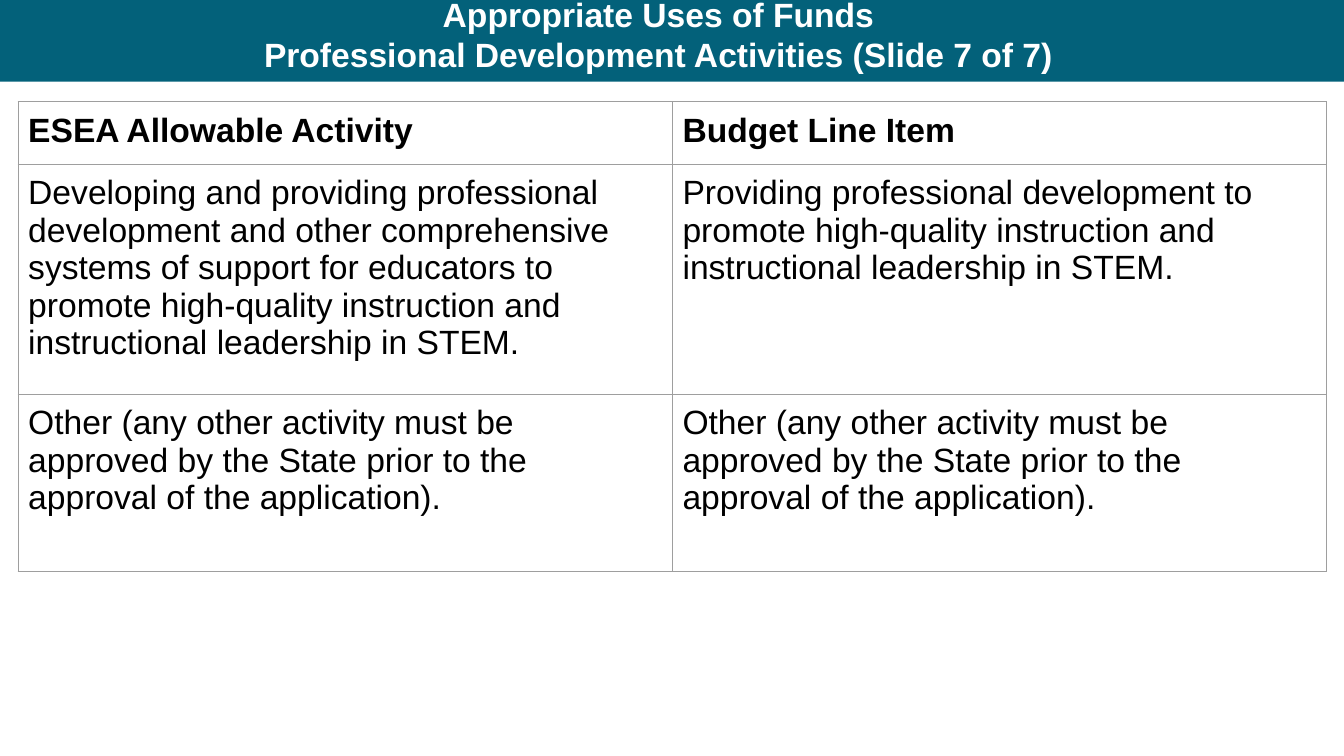
from lxml.etree import SubElement
from pptx import Presentation
from pptx.dml.color import RGBColor
from pptx.enum.shapes import MSO_SHAPE
from pptx.enum.text import MSO_ANCHOR, PP_ALIGN
from pptx.oxml.ns import qn
from pptx.util import Inches, Pt

COLORS = {"banner": "03617A", "title": "FFFFFF", "text": "000000",
          "paper": "FFFFFF", "border": "9E9E9E"}
FONT = "Arial"
FONT_SIZE = Pt(24)
BORDER_WIDTH = Pt(0.75)

TITLE = ["Appropriate Uses of Funds",
         "Professional Development Activities (Slide 7 of 7)"]
OTHER = ("Other (any other activity must be approved by the State prior to "
         "the approval of the application).")
ACTIVITIES = [
    ["ESEA Allowable Activity", "Budget Line Item"],
    ["Developing and providing professional development and other "
     "comprehensive systems of support for educators to promote high-quality "
     "instruction and instructional leadership in STEM.",
     "Providing professional development to promote high-quality instruction "
     "and instructional leadership in STEM."],
    [OTHER, OTHER],
]
ROW_HEIGHTS = [0.62, 2.28, 1.76]


def color(name):
    return RGBColor.from_string(COLORS[name])


def style_paragraph(paragraph, color_name, bold):
    font = paragraph.font
    font.name, font.size, font.bold = FONT, FONT_SIZE, bold
    font.color.rgb = color(color_name)


def add_banner(slide, left, top, width, height):
    banner = slide.shapes.add_shape(MSO_SHAPE.RECTANGLE, left, top, width, height)
    banner.shadow.inherit = False
    banner.fill.solid()
    banner.fill.fore_color.rgb = color("banner")
    banner.line.fill.background()


def add_title(slide, left, top, width, height):
    """Stack the title lines upward from the bottom of the box."""
    frame = slide.shapes.add_textbox(left, top, width, height).text_frame
    frame.word_wrap = True
    frame.vertical_anchor = MSO_ANCHOR.BOTTOM
    frame.margin_top = frame.margin_bottom = Inches(0.06)
    frame.text = "\n".join(TITLE)
    for paragraph in frame.paragraphs:
        paragraph.alignment = PP_ALIGN.CENTER
        paragraph.line_spacing = Pt(28.5)
        style_paragraph(paragraph, "title", bold=True)


def add_borders(cell):
    properties = cell._tc.get_or_add_tcPr()
    for position, side in enumerate(("a:lnL", "a:lnR", "a:lnT", "a:lnB")):
        line = properties.makeelement(qn(side), {"w": str(BORDER_WIDTH)})
        properties.insert(position, line)
        fill = SubElement(line, qn("a:solidFill"))
        SubElement(fill, qn("a:srgbClr"), val=COLORS["border"])


def fill_cell(cell, text, bold):
    cell.fill.solid()
    cell.fill.fore_color.rgb = color("paper")
    cell.margin_left = cell.margin_right = Inches(0.1)
    cell.margin_top = cell.margin_bottom = Inches(0.1)
    cell.text = text
    style_paragraph(cell.text_frame.paragraphs[0], "text", bold)
    add_borders(cell)


def add_activity_table(slide, left, top, width, height):
    table = slide.shapes.add_table(len(ACTIVITIES), len(ACTIVITIES[0]),
                                   left, top, width, height).table
    table.horz_banding = False
    for row, row_height, texts in zip(table.rows, ROW_HEIGHTS, ACTIVITIES):
        row.height = Inches(row_height)
        for cell, text in zip(row.cells, texts):
            fill_cell(cell, text, bold=texts is ACTIVITIES[0])


def main():
    presentation = Presentation()
    presentation.slide_width, presentation.slide_height = Inches(13.33), Inches(7.5)
    slide = presentation.slides.add_slide(presentation.slide_layouts[6])
    add_banner(slide, 0, 0, presentation.slide_width, Inches(0.81))
    add_title(slide, Inches(0.37), Inches(0.33), Inches(12.32), Inches(0.47))
    add_activity_table(slide, Inches(0.18), Inches(1.01), Inches(12.98),
                       Inches(sum(ROW_HEIGHTS)))
    presentation.save("out.pptx")


if __name__ == "__main__":
    main()
